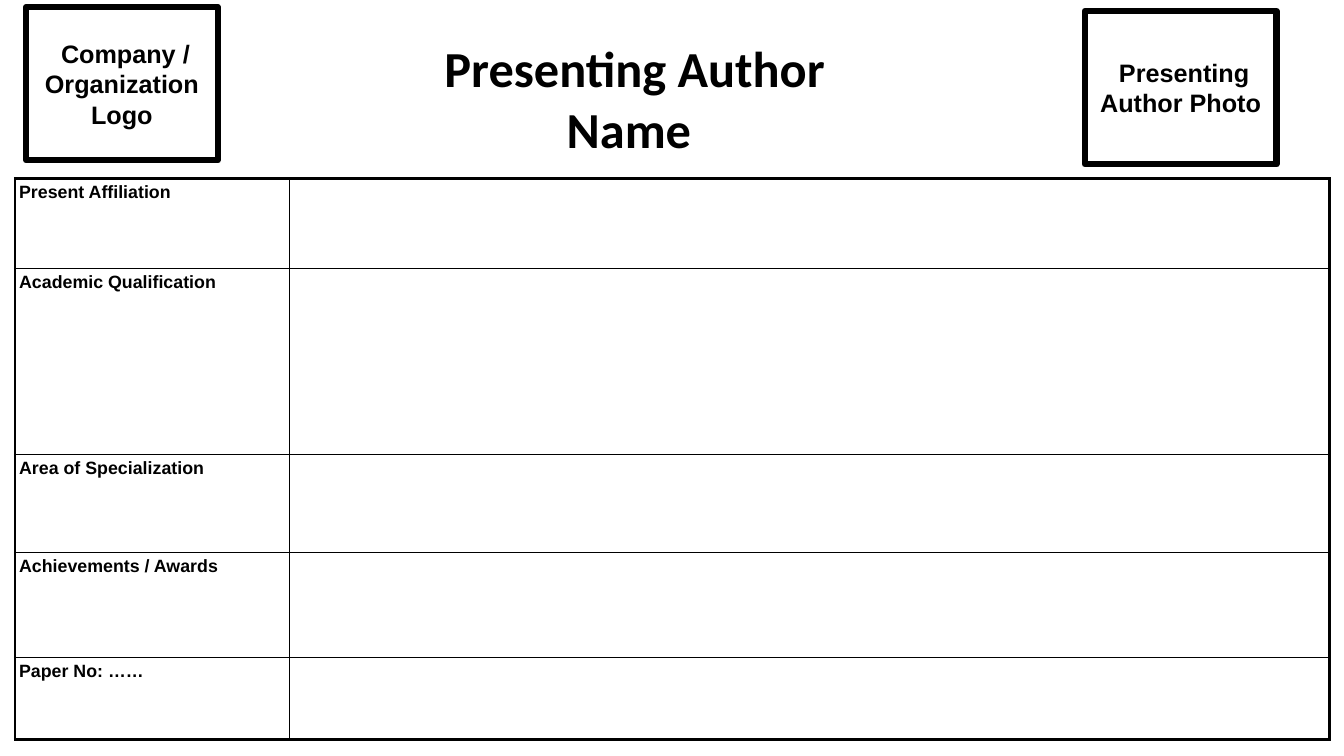
from lxml import etree
from pptx import Presentation
from pptx import util as u
from pptx.dml.color import RGBColor
from pptx.enum import shapes, text
from pptx.oxml.ns import qn

# Content; lengths in px, 100 px to the inch
TITLE = "Presenting Author Name "
TITLE_BOX = (393, 32, 473, 131)
FRAMES = [
    (" Company / Organization Logo", 26, 7),
    (" Presenting Author Photo", 1076, 11),
]
FRAME_SIZE = (190, 152)
ROWS = [
    ("Present Affiliation", 89),
    ("Academic Qualification", 185),
    ("Area of Specialization", 97),
    ("Achievements / Awards", 104),
    ("Paper No: ……", 82),
]
COLUMNS = [272, 1032]
TABLE_AT = (15, 177)
INSET = 4

THEME = dict(ink="000000", head_font="Calibri", body_font="Arial",
             title=36, frame=18, label=12.7,
             frame_line=4.5, outer_line=2.25, inner_line=1)


def px(n):
    return u.Emu(n * 9144)


def write(tf, words, size, font=THEME["body_font"], align=None, inset=None):
    tf.word_wrap = True
    if inset is not None:
        tf.margin_left = tf.margin_right = px(inset)
        tf.margin_top = tf.margin_bottom = px(inset)
    p = tf.paragraphs[0]
    p.alignment = align
    r = p.add_run()
    r.text = words
    r.font.size = u.Pt(size)
    r.font.name = font
    r.font.bold = True
    r.font.color.rgb = RGBColor.from_string(THEME["ink"])


def set_borders(cell, **outer):
    """Draw all four borders, heavier on the table's outer sides."""
    tc_pr = cell._tc.get_or_add_tcPr()
    for i, side in enumerate("LRTB"):
        width = THEME["outer_line" if outer[side] else "inner_line"]
        ln = etree.Element(qn(f"a:ln{side}"), w=str(u.Pt(width)))
        fill = etree.SubElement(ln, qn("a:solidFill"))
        etree.SubElement(fill, qn("a:srgbClr"), val=THEME["ink"])
        tc_pr.insert(i, ln)


prs = Presentation()
prs.slide_width, prs.slide_height = px(1333), px(750)
s = prs.slides.add_slide(prs.slide_layouts[6])

# Profile table
heights = [h for _, h in ROWS]
table = s.shapes.add_table(len(ROWS), len(COLUMNS), *map(px, TABLE_AT),
                           px(sum(COLUMNS)), px(sum(heights))).table
table.first_row = table.horz_banding = False
for column, width in zip(table.columns, COLUMNS):
    column.width = px(width)
for i, (label, height) in enumerate(ROWS):
    table.rows[i].height = px(height)
    for j in range(len(COLUMNS)):
        cell = table.cell(i, j)
        cell.fill.background()
        set_borders(cell, L=j == 0, R=j == len(COLUMNS) - 1,
                    T=i == 0, B=i == len(ROWS) - 1)
    cell = table.cell(i, 0)
    cell.margin_left = cell.margin_right = px(INSET)
    cell.margin_top = cell.margin_bottom = px(INSET)
    write(cell.text_frame, label, THEME["label"])

# Title
box = s.shapes.add_textbox(*map(px, TITLE_BOX))
write(box.text_frame, TITLE, THEME["title"], font=THEME["head_font"],
      align=text.PP_ALIGN.CENTER)

# Logo and photo frames
for words, left, top in FRAMES:
    sp = s.shapes.add_shape(shapes.MSO_SHAPE.RECTANGLE, px(left), px(top),
                            *map(px, FRAME_SIZE))
    sp.shadow.inherit = False
    sp.fill.background()
    sp.line.color.rgb = RGBColor.from_string(THEME["ink"])
    sp.line.width = u.Pt(THEME["frame_line"])
    sp.text_frame.vertical_anchor = text.MSO_ANCHOR.MIDDLE
    write(sp.text_frame, words, THEME["frame"],
          align=text.PP_ALIGN.CENTER, inset=INSET)

prs.save("out.pptx")
